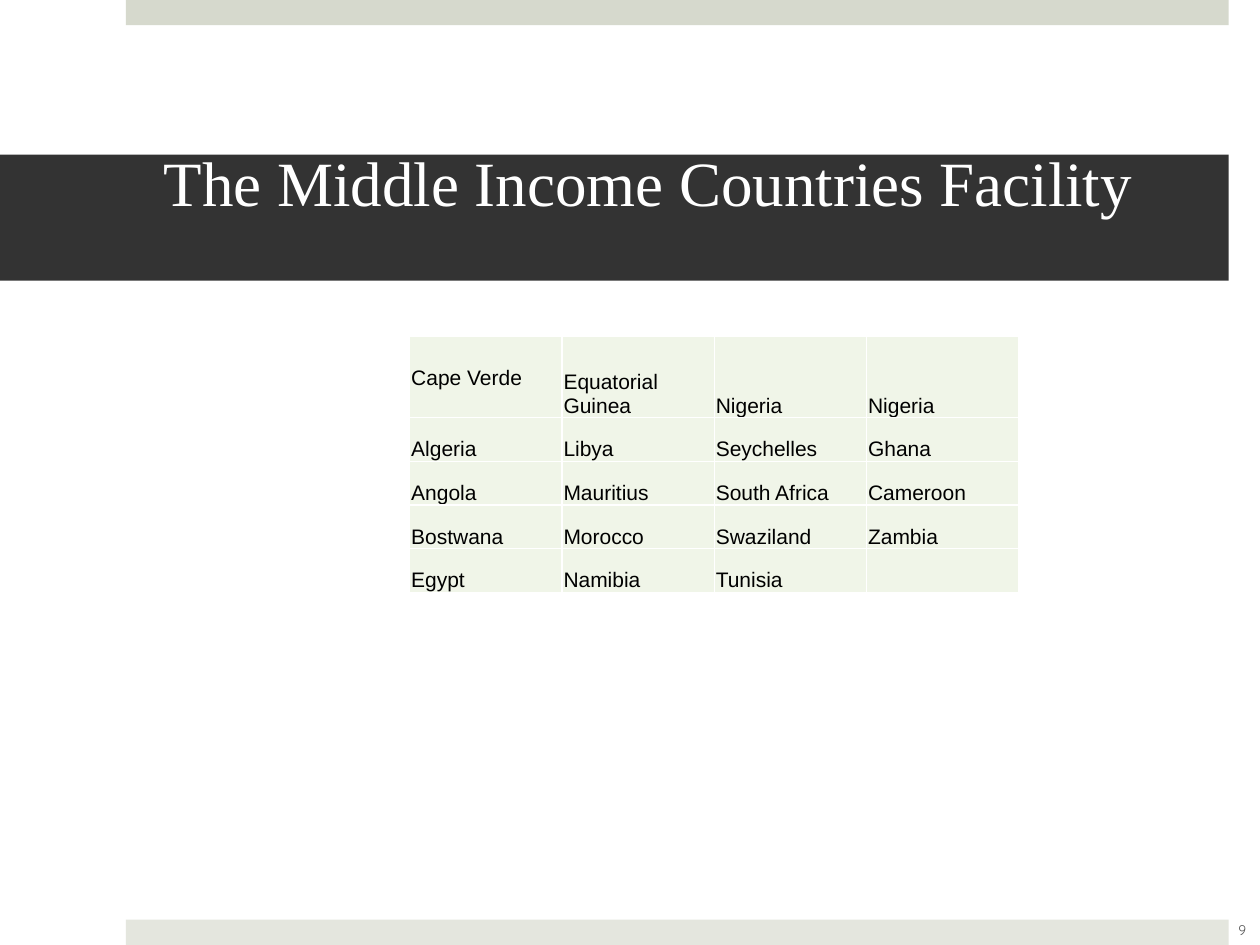
from lxml.etree import SubElement
from pptx import Presentation
from pptx.dml.color import RGBColor
from pptx.enum.shapes import MSO_SHAPE
from pptx.enum.text import MSO_ANCHOR, PP_ALIGN
from pptx.oxml.ns import qn
from pptx.util import Cm, Pt

WHITE = RGBColor(0xFF, 0xFF, 0xFF)
BLACK = RGBColor(0, 0, 0)
DARK = RGBColor(0x33, 0x33, 0x33)
GREY = RGBColor(0x59, 0x59, 0x59)
SAGE = RGBColor(0xD6, 0xD9, 0xCD)
PALE = RGBColor(0xE4, 0xE6, 0xDE)
MINT = RGBColor(0xF0, 0xF5, 0xE8)

TITLE = dict(name="Times New Roman", size=Pt(36), color=WHITE)
BODY = dict(name="Arial", size=Pt(12), color=BLACK)
PAGE = dict(name="Quicksand", size=Pt(8), color=GREY)

LANDS = [
    ["Cape Verde", "Equatorial Guinea", "Nigeria", "Nigeria"],
    ["Algeria", "Libya", "Seychelles", "Ghana"],
    ["Angola", "Mauritius", "South Africa", "Cameroon"],
    ["Bostwana", "Morocco", "Swaziland", "Zambia"],
    ["Egypt", "Namibia", "Tunisia", ""],
]


class Deck:
    def __init__(self, width, height):
        self.file = Presentation()
        self.file.slide_width, self.file.slide_height = Cm(width), Cm(height)
        self.slide = self.file.slides.add_slide(self.file.slide_layouts[6])

    def words(self, frame, text, style, align=PP_ALIGN.LEFT):
        para = frame.paragraphs[0]
        para.alignment = align
        para.text = text
        for key, value in style.items():
            if key == "color":
                para.font.color.rgb = value
            else:
                setattr(para.font, key, value)

    def inset(self, item, left, top, right, bottom):
        sides = dict(left=left, top=top, right=right, bottom=bottom)
        for side, size in sides.items():
            setattr(item, f"margin_{side}", Cm(size))

    def bar(self, left, top, width, height, fill):
        box = self.slide.shapes.add_shape(
            MSO_SHAPE.RECTANGLE, Cm(left), Cm(top), Cm(width), Cm(height))
        box.shadow.inherit = False
        box.fill.solid()
        box.fill.fore_color.rgb = fill
        box.line.fill.background()
        return box

    def title(self, text, *place):
        frame = self.bar(*place, DARK).text_frame
        frame.word_wrap = True
        frame.vertical_anchor = MSO_ANCHOR.MIDDLE
        self.inset(frame, 3.3, 0, 0.76, 1.46)
        self.words(frame, text, TITLE)

    def label(self, text, left, top, width, height):
        frame = self.slide.shapes.add_textbox(
            Cm(left), Cm(top), Cm(width), Cm(height)).text_frame
        frame.word_wrap = True
        frame.vertical_anchor = MSO_ANCHOR.MIDDLE
        self.words(frame, text, PAGE, PP_ALIGN.CENTER)

    def edge(self, cell):
        """Draw a white 1 pt border round the cell."""
        props = cell._tc.get_or_add_tcPr()
        for spot, side in enumerate(("lnL", "lnR", "lnT", "lnB")):
            line = SubElement(props, qn(f"a:{side}"), w=str(Pt(1)))
            fill = SubElement(line, qn("a:solidFill"))
            SubElement(fill, qn("a:srgbClr"), val=str(WHITE))
            props.insert(spot, line)

    def grid(self, rows, left, top, width, heights):
        count = len(rows[0])
        table = self.slide.shapes.add_table(
            len(rows), count, Cm(left), Cm(top),
            Cm(width), Cm(sum(heights))).table
        table.first_row = table.horz_banding = False
        for col in table.columns:
            col.width = Cm(width / count)
        for r, (row, height) in enumerate(zip(rows, heights)):
            table.rows[r].height = Cm(height)
            for c, text in enumerate(row):
                cell = table.cell(r, c)
                cell.fill.solid()
                cell.fill.fore_color.rgb = MINT
                cell.vertical_anchor = MSO_ANCHOR.BOTTOM
                self.inset(cell, 0.03, 0.03, 0.03, 0)
                self.words(cell.text_frame, text, BODY)
                self.edge(cell)
        table.cell(0, 0).vertical_anchor = MSO_ANCHOR.MIDDLE


def main():
    deck = Deck(25.4, 19.05)
    deck.bar(2.54, 0, 22.23, 0.51, SAGE)
    deck.bar(2.54, 18.54, 22.23, 0.51, PALE)
    deck.title("The Middle Income Countries Facility", 0, 3.12, 24.77, 2.54)
    deck.grid(LANDS, 8.26, 6.78, 12.28, [1.64] + [0.88] * 4)
    deck.label("9", 24.41, 18.24, 1.27, 1.02)
    deck.file.save("out.pptx")


if __name__ == "__main__":
    main()
